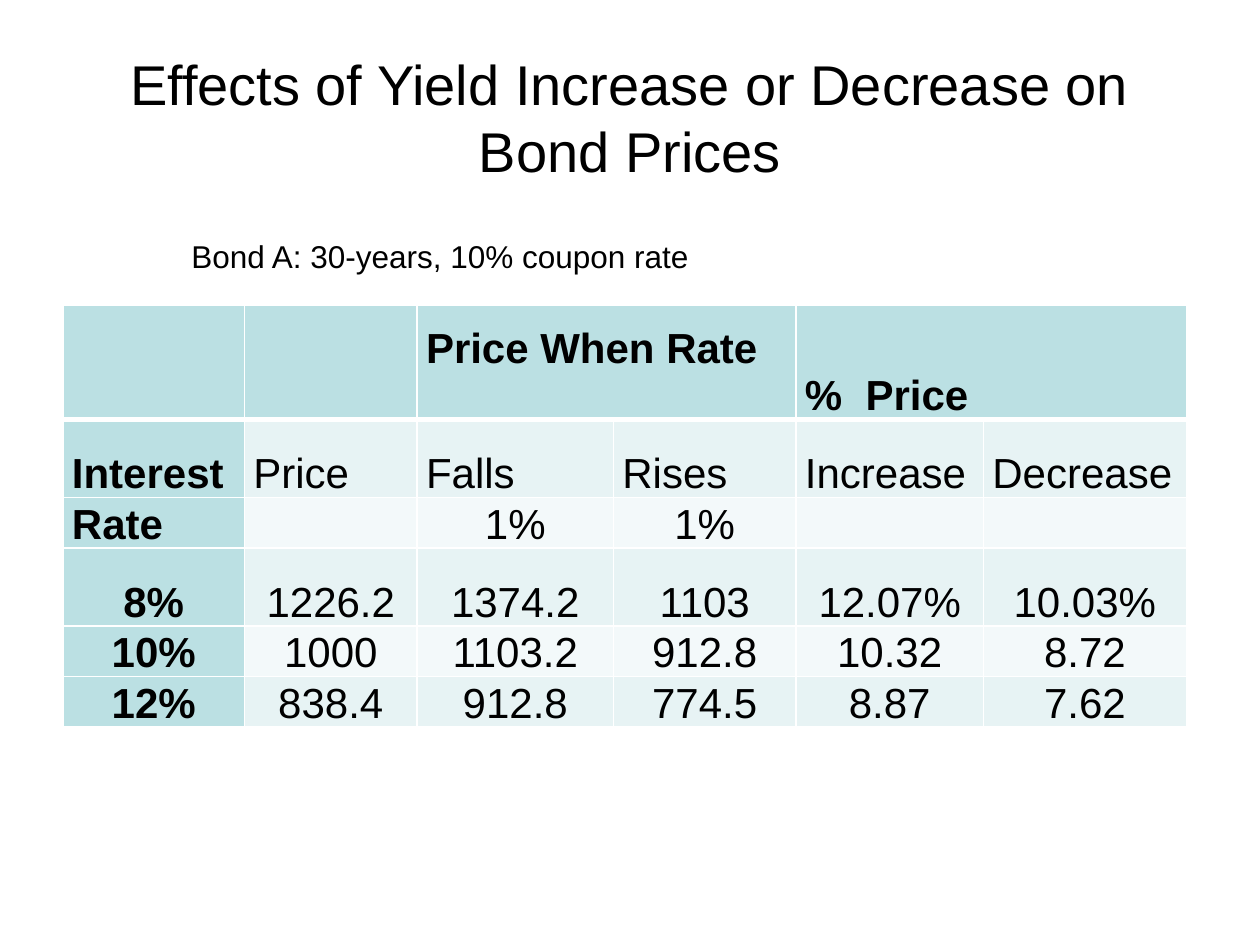
from dataclasses import dataclass

import pptx
import pptx.dml.color
import pptx.enum.text
import pptx.oxml
import pptx.oxml.ns
import pptx.util
from pptx.util import Cm, Pt

ALIGN = pptx.enum.text.PP_ALIGN
ANCHOR = pptx.enum.text.MSO_ANCHOR


@dataclass(frozen=True)
class Theme:
    font: str = "Arial"
    ink: str = "000000"
    heading_fill: str = "BBE0E3"
    band_fills: tuple = ("F3F9FA", "E7F3F4")
    grid: str = "FFFFFF"
    grid_width: float = 1
    header_rule_width: float = 3
    title_size: float = 32
    caption_size: float = 18
    table_size: float = 24


THEME = Theme()

COLUMN_WIDTHS = (3.66, 3.48, 3.96, 3.68, 3.78, 4.09)
ROW_HEIGHTS = (2.31, 1.57, 1.02, 1.57, 1.02, 1.02)
BOND_ROWS = (
    ("", "", "Price When Rate", "", "%  Price", ""),
    ("Interest", "Price", "Falls", "Rises", "Increase", "Decrease"),
    ("Rate", "", "1%", "1%", "", ""),
    ("8%", "1226.2", "1374.2", "1103", "12.07%", "10.03%"),
    ("10%", "1000", "1103.2", "912.8", "10.32", "8.72"),
    ("12%", "838.4", "912.8", "774.5", "8.87", "7.62"),
)
GROUP_COLUMNS = (2, 4)


def rgb(value):
    return pptx.dml.color.RGBColor.from_string(value)


def write(frame, wording, size, align=ALIGN.LEFT, bold=False):
    frame.text = wording
    paragraph = frame.paragraphs[0]
    paragraph.alignment = align
    paragraph.font.size = Pt(size)
    for run in paragraph.runs:
        run.font.name = THEME.font
        run.font.size = Pt(size)
        run.font.bold = bold
        run.font.color.rgb = rgb(THEME.ink)


def add_title(slide, left, top, width, height):
    title = slide.shapes.add_textbox(left, top, width, height).text_frame
    title.word_wrap = True
    title.vertical_anchor = ANCHOR.MIDDLE
    write(title, "Effects of Yield Increase or Decrease on Bond Prices",
          THEME.title_size, ALIGN.CENTER)


def add_caption(slide, left, top, width, height):
    caption = slide.shapes.add_textbox(left, top, width, height).text_frame
    caption.word_wrap = False
    caption.auto_size = pptx.enum.text.MSO_AUTO_SIZE.SHAPE_TO_FIT_TEXT
    write(caption, "Bond A: 30-years, 10% coupon rate", THEME.caption_size)


def set_borders(cell, row):
    """Draw the white grid, heavier along the rule under the header row."""
    widths = dict.fromkeys("LRTB", THEME.grid_width)
    if row == 0:
        widths["B"] = THEME.header_rule_width
    elif row == 1:
        widths["T"] = THEME.header_rule_width
    properties = cell._tc.get_or_add_tcPr()
    for position, (side, width) in enumerate(widths.items()):
        line = pptx.oxml.parse_xml(
            f'<a:ln{side} {pptx.oxml.ns.nsdecls("a")} w="{Pt(width)}">'
            f'<a:solidFill><a:srgbClr val="{THEME.grid}"/></a:solidFill>'
            f'</a:ln{side}>')
        properties.insert(position, line)


def style_cell(cell, row, column, wording):
    heading = row == 0 or column == 0
    cell.margin_left = cell.margin_right = Cm(0.18)
    cell.margin_top = cell.margin_bottom = 0
    cell.vertical_anchor = ANCHOR.BOTTOM
    cell.fill.solid()
    cell.fill.fore_color.rgb = rgb(
        THEME.heading_fill if heading else THEME.band_fills[row % 2])
    set_borders(cell, row)
    centred = row > 2 or (row == 2 and column > 0)
    write(cell.text_frame, wording, THEME.table_size,
          ALIGN.CENTER if centred else ALIGN.LEFT, heading)


def add_bond_table(slide, left, top, width, height):
    table = slide.shapes.add_table(
        len(ROW_HEIGHTS), len(COLUMN_WIDTHS), left, top, width, height).table
    for column, share in zip(table.columns, COLUMN_WIDTHS):
        column.width = int(width * share / sum(COLUMN_WIDTHS))
    for row, share in zip(table.rows, ROW_HEIGHTS):
        row.height = int(height * share / sum(ROW_HEIGHTS))
    for column in GROUP_COLUMNS:
        table.cell(0, column).merge(table.cell(0, column + 1))
    for row, wordings in enumerate(BOND_ROWS):
        for column, wording in enumerate(wordings):
            style_cell(table.cell(row, column), row, column, wording)
    price_heading = table.cell(0, GROUP_COLUMNS[0])
    price_heading.margin_bottom = Cm(0.95)


def main():
    deck = pptx.Presentation()
    deck.slide_width, deck.slide_height = Cm(25.4), Cm(19.05)
    slide = deck.slides.add_slide(deck.slide_layouts[6])
    add_title(slide, Cm(1.27), Cm(0.76), Cm(22.86), Cm(3.18))
    add_caption(slide, Cm(3.61), Cm(4.65), Cm(10.64), Cm(1.02))
    add_bond_table(slide, Cm(1.27), Cm(6.15), Cm(22.65), Cm(8.51))
    deck.save("out.pptx")


if __name__ == "__main__":
    main()
